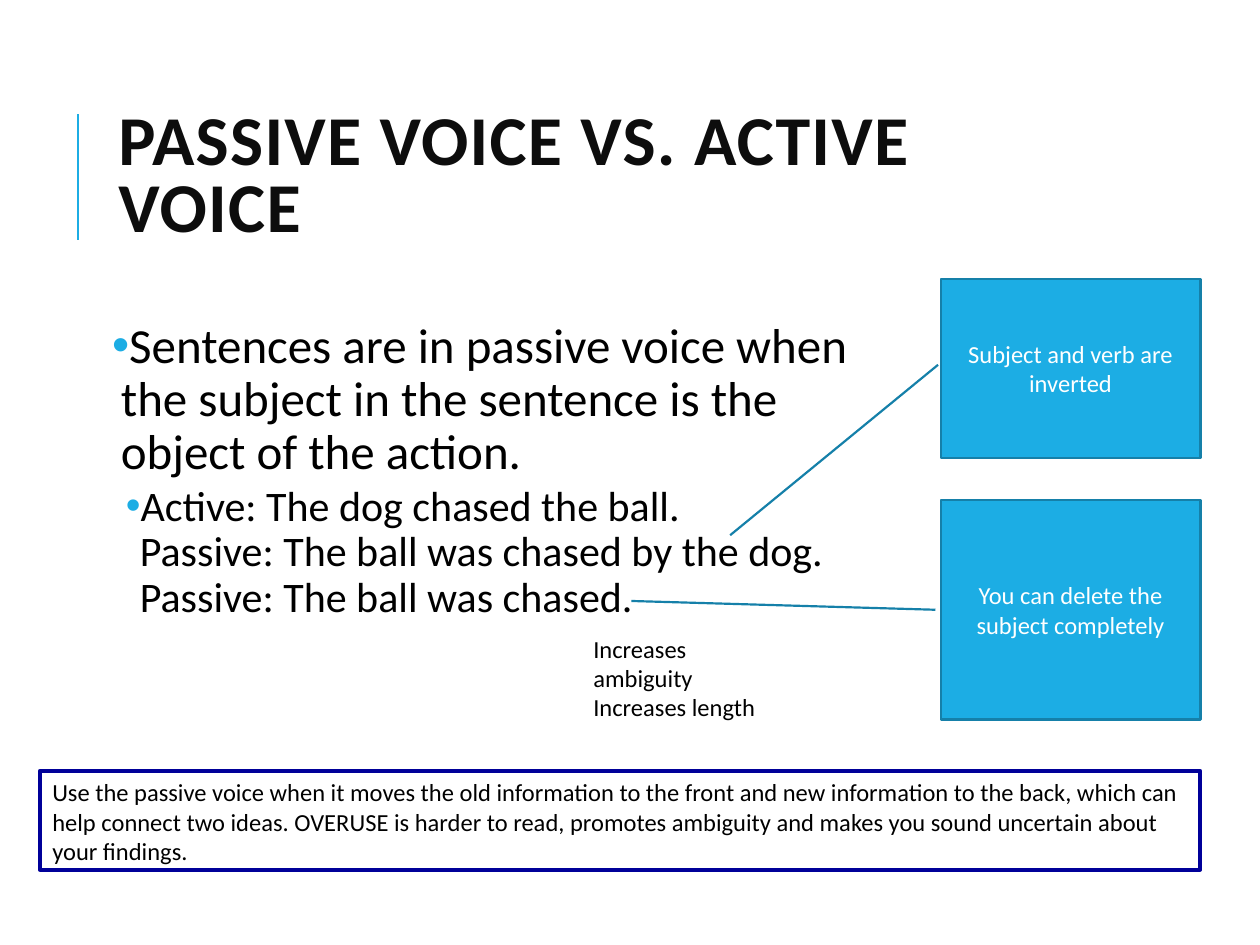
import pptx
import pptx.util
import pptx.dml.color
import pptx.enum.shapes
import pptx.enum.text
import pptx.oxml.ns
import lxml.etree

Pt = pptx.util.Pt
KIND = pptx.enum.shapes.MSO_SHAPE
ALIGN = pptx.enum.text.PP_ALIGN
ANCHOR = pptx.enum.text.MSO_ANCHOR
qn = pptx.oxml.ns.qn
HUES = {"sky": "1CADE4", "teal": "1580A9", "navy": "000099",
        "ink": "0D0D0D", "black": "000000", "white": "FFFFFF"}


def hue(name):
    """Return the named colour."""
    return pptx.dml.color.RGBColor.from_string(HUES[name])


def style(para, size, color="black", bold=False):
    """Set the font of a paragraph."""
    font = para.font
    font.name, font.size, font.bold = "Calibri", Pt(size), bold
    font.color.rgb = hue(color)


def frame(shape, side=7.2, anchor=ANCHOR.TOP):
    """Set wrap, margins and anchor, and return the text frame."""
    text = shape.text_frame
    text.word_wrap = True
    text.vertical_anchor = anchor
    text.margin_left = text.margin_right = Pt(side)
    text.margin_top = text.margin_bottom = Pt(3.6)
    return text


def area(slide, box):
    """Add a text box at the given place."""
    return slide.shapes.add_textbox(*map(Pt, box))


def panel(slide, kind, box, fill, line, width):
    """Add a flat shape with an outline."""
    shape = slide.shapes.add_shape(kind, *map(Pt, box))
    shape.shadow.inherit = False
    if fill:
        shape.fill.solid()
        shape.fill.fore_color.rgb = hue(fill)
    else:
        shape.fill.background()
    shape.line.color.rgb = hue(line)
    shape.line.width = Pt(width)
    return shape


def bullet(para, left, hang):
    """Give a paragraph a coloured bullet and a hanging indent."""
    props = para._p.get_or_add_pPr()
    props.set("marL", str(Pt(left)))
    props.set("indent", str(-Pt(hang)))
    tint = lxml.etree.SubElement(props, qn("a:buClr"))
    lxml.etree.SubElement(tint, qn("a:srgbClr"), val=HUES["sky"])
    lxml.etree.SubElement(props, qn("a:buFont"), typeface="Arial")
    lxml.etree.SubElement(props, qn("a:buChar"), char="•")


def header(slide, box, words):
    """Place the title and the rule on its left."""
    left, top, _, high = box
    x = left - 15.8
    rule = slide.shapes.add_connector(
        pptx.enum.shapes.MSO_CONNECTOR.STRAIGHT,
        Pt(x), Pt(top + high - 2), Pt(x), Pt(top))
    rule.line.color.rgb = hue("sky")
    rule.line.width = Pt(1.5)
    lxml.etree.SubElement(rule._element.spPr, qn("a:effectLst"))
    para = frame(area(slide, box), anchor=ANCHOR.MIDDLE).paragraphs[0]
    para.text = words
    para.line_spacing = 0.8
    style(para, 40, "ink", True)
    para.runs[0].font._element.set("spc", "80")


def body(slide, box, items):
    """Place the bulleted text."""
    text = frame(area(slide, box), side=3.6)
    for i, (words, size, left, hang, before, after) in enumerate(items):
        para = text.add_paragraph() if i else text.paragraphs[0]
        para.text = words
        bullet(para, left, hang)
        para.line_spacing = 0.9
        para.space_before, para.space_after = Pt(before), Pt(after)
        style(para, size)


def callout(slide, box, words, points):
    """Place a filled callout whose line ends at the given points."""
    shape = panel(slide, KIND.LINE_CALLOUT_1, box, "sky", "teal", 1.25)
    for i, value in enumerate(points):
        shape.adjustments[i] = value
    para = frame(shape, anchor=ANCHOR.MIDDLE).paragraphs[0]
    para.text = words
    para.alignment = ALIGN.CENTER
    style(para, 14, "white")


def remark(slide, box, lines):
    """Place the short list of effects."""
    text = frame(area(slide, box))
    text.text = "\n".join(lines)
    for para in text.paragraphs:
        style(para, 14)


def advice(slide, box, words):
    """Place the outlined advice along the foot."""
    text = frame(panel(slide, KIND.RECTANGLE, box, None, "navy", 2.25))
    para = text.paragraphs[0]
    para.text = words
    para.alignment = ALIGN.LEFT
    style(para, 14)


def main():
    """Build the slide and save it."""
    deck = pptx.Presentation()
    deck.slide_width, deck.slide_height = Pt(720), Pt(540)
    slide = deck.slides.add_slide(deck.slide_layouts[6])
    header(slide, (60.5, 65, 574, 74), "PASSIVE VOICE VS. ACTIVE VOICE")
    body(slide, (60.5, 180, 433.5, 317), [
        ("Sentences are in passive voice when the subject in the sentence "
         "is the object of the action.", 28, 5, 5, 9, 1.5),
        ("Active: The dog chased the ball.\v"
         "Passive: The ball was chased by the dog.\v"
         "Passive: The ball was chased.", 24, 15.8, 7.9, 1.5, 3)])
    callout(slide, (537.5, 159.3, 148.5, 102.5),
            "Subject and verb are inverted", (0.48, -0.01, 1.43, -0.81))
    callout(slide, (537.5, 285.7, 148.5, 125.5),
            "You can delete the subject completely",
            (0.5, -0.02, 0.46, -1.19))
    remark(slide, (332, 358.5, 121.5, 56),
           ["Increases ambiguity", "Increases length"])
    advice(slide, (22.8, 440.5, 663, 56.5),
           "Use the passive voice when it moves the old information to the "
           "front and new information to the back, which can help connect "
           "two ideas. OVERUSE is harder to read, promotes ambiguity and "
           "makes you sound uncertain about your findings.")
    deck.save("out.pptx")


if __name__ == "__main__":
    main()
